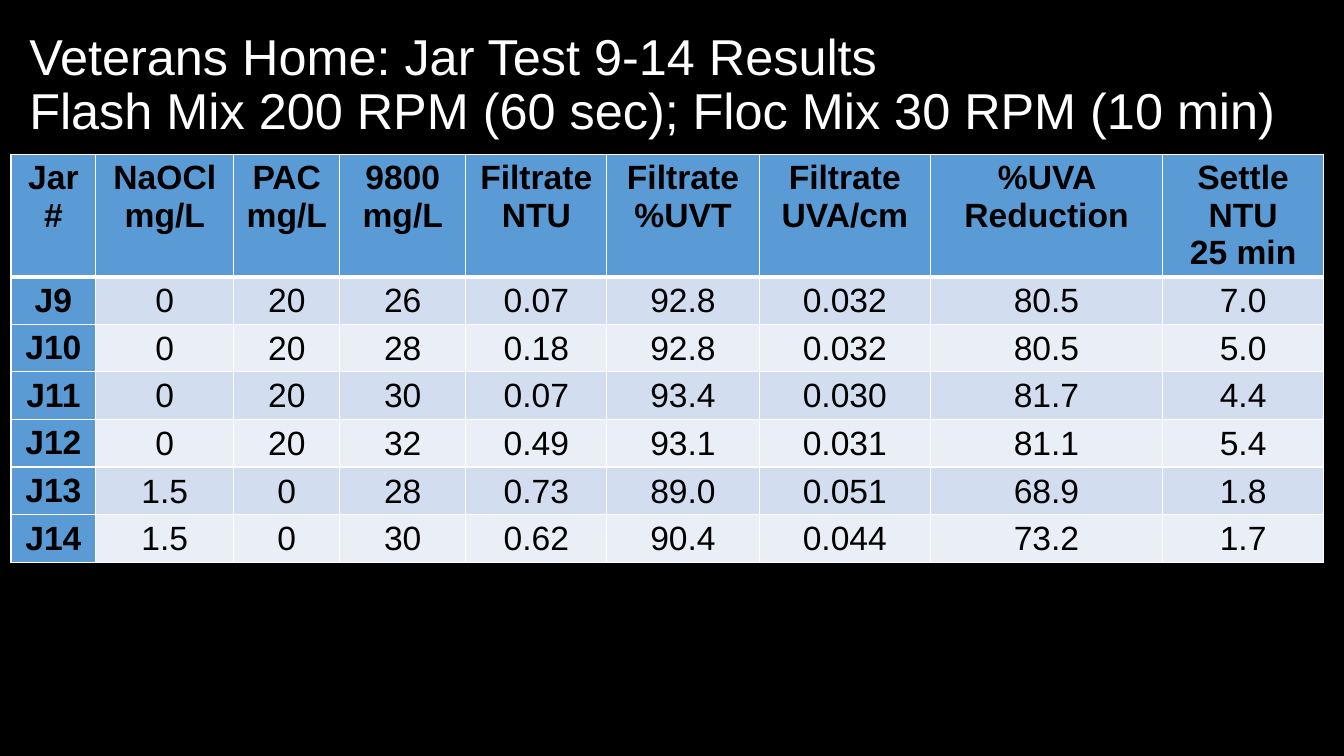
import pptx
import pptx.util
import pptx.dml.color
import pptx.enum.text
import pptx.oxml.ns
import lxml.etree


def color(value):
    return pptx.dml.color.RGBColor.from_string(value)


def add_border(cell, side, points):
    properties = cell._tc.get_or_add_tcPr()
    name = pptx.oxml.ns.qn
    line = lxml.etree.SubElement(properties, name("a:ln" + side), w=str(pptx.util.Pt(points)))
    fill = lxml.etree.SubElement(line, name("a:solidFill"))
    lxml.etree.SubElement(fill, name("a:srgbClr"), val="FFFFFF")


Inches = pptx.util.Inches
Pt = pptx.util.Pt

title_lines = [
    "Veterans Home: Jar Test 9-14 Results",
    "Flash Mix 200 RPM (60 sec); Floc Mix 30 RPM (10 min)",
]
rows = [
    ["Jar\n#", "NaOCl\nmg/L", "PAC\nmg/L", "9800\nmg/L", "Filtrate\nNTU",
     "Filtrate\n%UVT", "Filtrate\nUVA/cm", "%UVA Reduction", "Settle\nNTU\n25 min"],
    ["J9", "0", "20", "26", "0.07", "92.8", "0.032", "80.5", "7.0"],
    ["J10", "0", "20", "28", "0.18", "92.8", "0.032", "80.5", "5.0"],
    ["J11", "0", "20", "30", "0.07", "93.4", "0.030", "81.7", "4.4"],
    ["J12", "0", "20", "32", "0.49", "93.1", "0.031", "81.1", "5.4"],
    ["J13", "1.5", "0", "28", "0.73", "89.0", "0.051", "68.9", "1.8"],
    ["J14", "1.5", "0", "30", "0.62", "90.4", "0.044", "73.2", "1.7"],
]
column_widths = [0.84, 1.37, 1.05, 1.25, 1.4, 1.51, 1.7, 2.3, 1.6]
header_height, body_height = 0.55, 0.41

presentation = pptx.Presentation()
presentation.slide_width = Inches(13.33)
presentation.slide_height = Inches(7.5)
slide = presentation.slides.add_slide(presentation.slide_layouts[5])
slide.background.fill.solid()
slide.background.fill.fore_color.rgb = color("000000")

title = slide.shapes.title
title.left, title.top = Inches(0.19), Inches(0.13)
title.width, title.height = Inches(13.03), Inches(1.45)
title.text_frame.word_wrap = True
title.text_frame.auto_size = pptx.enum.text.MSO_AUTO_SIZE.NONE
title.text_frame.vertical_anchor = pptx.enum.text.MSO_ANCHOR.MIDDLE
paragraph = title.text_frame.paragraphs[0]
paragraph.alignment = pptx.enum.text.PP_ALIGN.LEFT
paragraph.line_spacing = 0.9
for index, text in enumerate(title_lines):
    if index:
        paragraph.add_line_break()
    run = paragraph.add_run()
    run.text = text
    run.font.name = "Arial"
    run.font.size = Pt(36)
    run.font.color.rgb = color("FFFFFF")

frame = slide.shapes.add_table(
    len(rows), len(column_widths), Inches(0.11), Inches(1.53), Inches(13.03), Inches(4.3))
table = frame.table
table.first_col = True
for column, width in zip(table.columns, column_widths):
    column.width = Inches(width)

for row_index, values in enumerate(rows):
    is_header = row_index == 0
    table.rows[row_index].height = Inches(header_height if is_header else body_height)
    for column_index, value in enumerate(values):
        cell = table.cell(row_index, column_index)
        is_label = is_header or column_index == 0
        add_border(cell, "L", 1)
        add_border(cell, "R", 1)
        add_border(cell, "T", 3 if row_index == 1 else 1)
        add_border(cell, "B", 3 if is_header else 1)
        cell.fill.solid()
        band = "D2DEEF" if row_index % 2 else "EAEFF7"
        cell.fill.fore_color.rgb = color("5B9BD5" if is_label else band)
        if not is_label:
            cell.vertical_anchor = pptx.enum.text.MSO_ANCHOR.MIDDLE
            cell.margin_left = cell.margin_right = cell.margin_top = Inches(0.01)
            cell.margin_bottom = 0
        for line_index, text in enumerate(value.split("\n")):
            text_frame = cell.text_frame
            paragraph = text_frame.add_paragraph() if line_index else text_frame.paragraphs[0]
            paragraph.alignment = pptx.enum.text.PP_ALIGN.CENTER
            run = paragraph.add_run()
            run.text = text
            run.font.name = "Arial"
            run.font.size = Pt(24)
            run.font.bold = is_label
            run.font.color.rgb = color("000000")
frame.height = Inches(4.3)

presentation.save("out.pptx")
